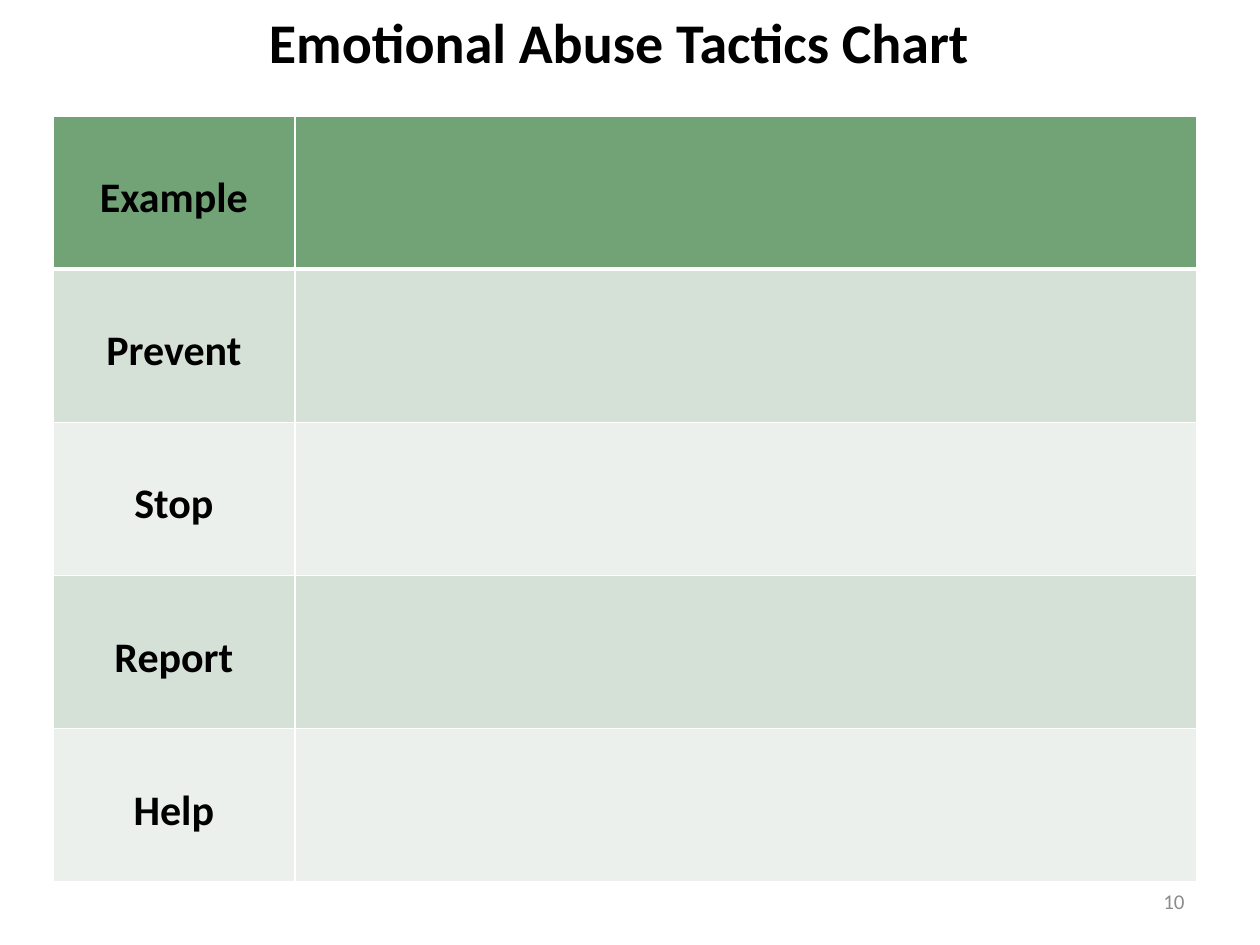
from dataclasses import dataclass

import pptx
import pptx.dml.color
import pptx.enum.text
import pptx.oxml
import pptx.oxml.ns
import pptx.util
from pptx.util import Inches

ALIGN = pptx.enum.text.PP_ALIGN
ANCHOR = pptx.enum.text.MSO_ANCHOR


@dataclass(frozen=True)
class Theme:
    font: str = "Calibri"
    text: str = "000000"
    muted: str = "8C8C8C"
    header: str = "72A376"
    bands: tuple = ("D5E0D6", "EBF0EC")
    border: str = "FFFFFF"
    title_size: int = 32
    label_size: int = 24
    number_size: int = 12
    thin: int = 1
    thick: int = 3


THEME = Theme()
ROW_LABELS = ("Example", "Prevent", "Stop", "Report", "Help")


def rgb(color):
    return pptx.dml.color.RGBColor.from_string(color)


def style_paragraph(paragraph, size, color, bold, alignment):
    paragraph.alignment = alignment
    font = paragraph.font
    font.name = THEME.font
    font.size = pptx.util.Pt(size)
    font.bold = bold
    font.color.rgb = rgb(color)


def add_text(slide, text, box, size, color, bold, alignment, anchor):
    shape = slide.shapes.add_textbox(*(Inches(value) for value in box))
    frame = shape.text_frame
    frame.word_wrap = True
    frame.vertical_anchor = anchor
    frame.text = text
    style_paragraph(frame.paragraphs[0], size, color, bold, alignment)


def set_borders(cell, top, bottom):
    """Draw all four sides; top and bottom are widths in points."""
    properties = cell._tc.get_or_add_tcPr()
    sides = (("lnL", THEME.thin), ("lnR", THEME.thin), ("lnT", top), ("lnB", bottom))
    for position, (side, width) in enumerate(sides):
        line = pptx.oxml.parse_xml(
            f'<a:{side} {pptx.oxml.ns.nsdecls("a")} w="{pptx.util.Pt(width)}">'
            f'<a:solidFill><a:srgbClr val="{THEME.border}"/></a:solidFill></a:{side}>'
        )
        properties.insert(position, line)


def add_tactics_table(slide):
    height = Inches(6.08)
    table = slide.shapes.add_table(
        len(ROW_LABELS), 2, Inches(0.42), Inches(0.92), Inches(9.08), height
    ).table
    table.columns[0].width = Inches(1.92)
    table.columns[1].width = Inches(7.16)
    for index, label in enumerate(ROW_LABELS):
        row = table.rows[index]
        row.height = height // len(ROW_LABELS)
        fill = THEME.header if index == 0 else THEME.bands[(index - 1) % 2]
        top = THEME.thick if index == 1 else THEME.thin
        bottom = THEME.thick if index == 0 else THEME.thin
        for cell in row.cells:
            cell.fill.solid()
            cell.fill.fore_color.rgb = rgb(fill)
            set_borders(cell, top, bottom)
        label_cell = row.cells[0]
        label_cell.margin_top = Inches(0.45)
        label_cell.text = label
        style_paragraph(label_cell.text_frame.paragraphs[0],
                        THEME.label_size, THEME.text, True, ALIGN.CENTER)


def main():
    presentation = pptx.Presentation()
    presentation.slide_width = Inches(10)
    presentation.slide_height = Inches(7.5)
    slide = presentation.slides.add_slide(presentation.slide_layouts[6])
    add_text(slide, "10", (7.17, 6.95, 2.33, 0.4), THEME.number_size,
             THEME.muted, False, ALIGN.RIGHT, ANCHOR.MIDDLE)
    add_tactics_table(slide)
    add_text(slide, "Emotional Abuse Tactics Chart", (0.83, 0.01, 8.17, 0.64),
             THEME.title_size, THEME.text, True, ALIGN.CENTER, ANCHOR.TOP)
    presentation.save("out.pptx")


if __name__ == "__main__":
    main()
